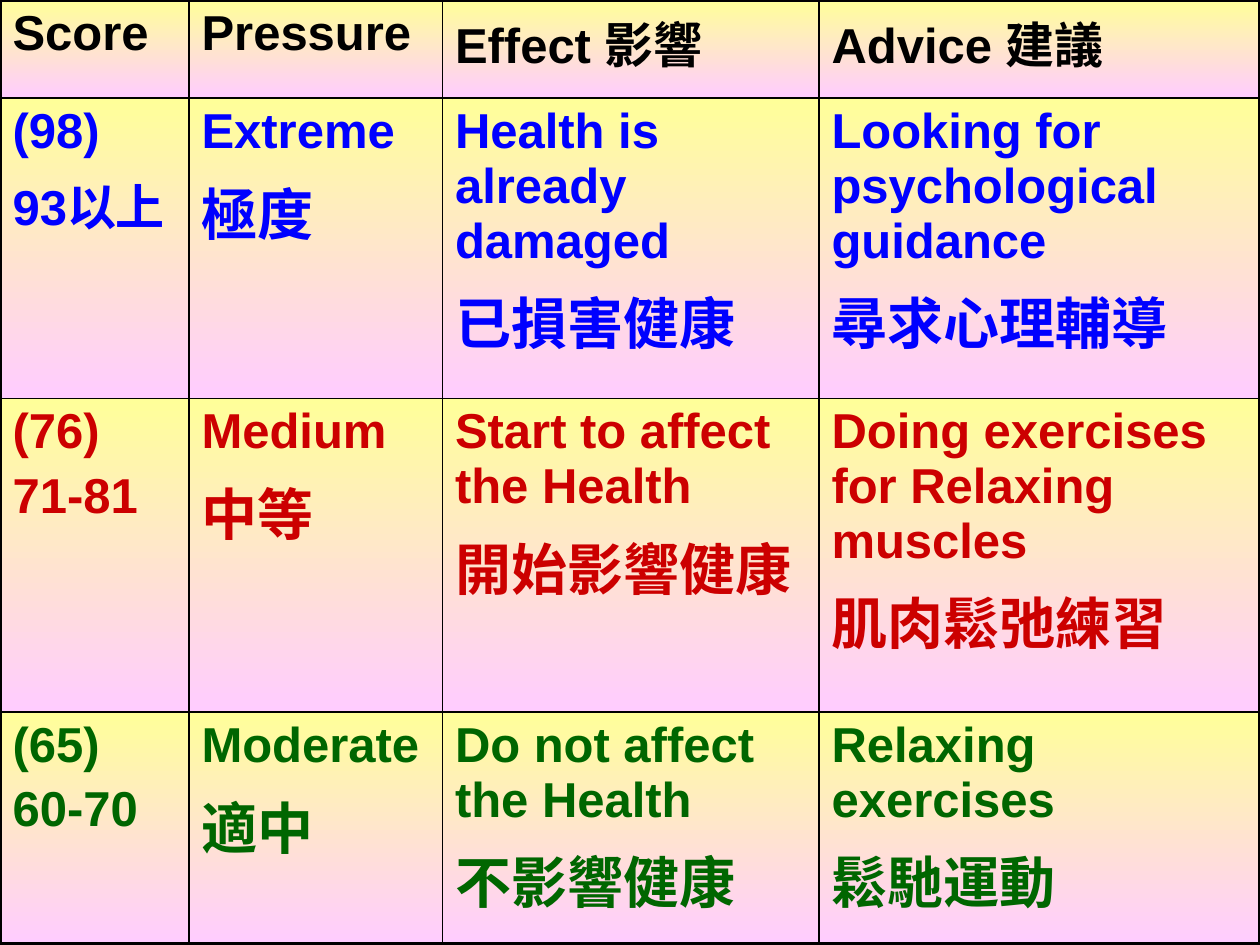
from pptx import Presentation
from pptx.dml.color import RGBColor as Rgb
from pptx.oxml import parse_xml
from pptx.oxml.ns import nsdecls
from pptx.util import Cm, Pt

HEADINGS = ["Score", "Pressure", "Effect 影響", "Advice 建議"]
LEVELS = [
    ("0000FF", [("(98)", "93以上"), ("Extreme", "極度"),
                ("Health is already damaged", "已損害健康"),
                ("Looking for psychological guidance", "尋求心理輔導")]),
    ("CC0000", [("(76)", "71-81"), ("Medium", "中等"),
                ("Start to affect the Health", "開始影響健康"),
                ("Doing exercises for Relaxing muscles", "肌肉鬆弛練習")]),
    ("006600", [("(65)", "60-70"), ("Moderate", "適中"),
                ("Do not affect the Health", "不影響健康"),
                ("Relaxing exercises", "鬆馳運動")]),
]
COLUMN_WIDTHS = [3.81, 5.11, 7.59, 8.89]
ROW_HEIGHTS = [1.98, 6.05, 6.32, 4.67]


def colour(hex_code):
    return Rgb.from_string(hex_code)


class StressSlide:
    """Hold the style and the slide, and draw the parts of the score table."""

    font = "Arial"
    english_size, chinese_size = 28, 32
    ink = "000000"
    gradient = ("FFFF99", "FFCCFF")
    outer, inner = 2.25, 1

    def __init__(self, deck):
        self.slide = deck.slides.add_slide(deck.slide_layouts[6])

    def table(self, widths, heights):
        grid = self.slide.shapes.add_table(
            len(heights), len(widths), Cm(0), Cm(0),
            Cm(sum(widths)), Cm(sum(heights))).table
        grid.first_row = grid.horz_banding = False
        for column, width in zip(grid.columns, widths):
            column.width = Cm(width)
        for row, height in zip(grid.rows, heights):
            row.height = Cm(height)
        return grid

    def fill(self, cell):
        cell.fill.gradient()
        cell.fill.gradient_angle = 270
        for stop, hex_code in zip(cell.fill.gradient_stops, self.gradient):
            stop.color.rgb = colour(hex_code)

    def borders(self, cell, outer_sides):
        properties = cell._tc.get_or_add_tcPr()
        for place, side in enumerate("LRTB"):
            weight = Pt(self.outer if side in outer_sides else self.inner)
            properties.insert(place, parse_xml(
                f'<a:ln{side} {nsdecls("a")} w="{weight}"><a:solidFill>'
                f'<a:srgbClr val="{self.ink}"/></a:solidFill></a:ln{side}>'))

    def text(self, cell, lines, sizes, hex_code):
        cell.text_frame.text = "\n".join(lines)
        for paragraph, size in zip(cell.text_frame.paragraphs, sizes):
            paragraph.space_before = Pt(0.2 * size)
            for run in paragraph.runs:
                run.font.name = self.font
                run.font.size = Pt(size)
                run.font.bold = True
                run.font.color.rgb = colour(hex_code)

    def score_table(self, headings, levels):
        grid = self.table(COLUMN_WIDTHS, ROW_HEIGHTS)
        rows = [(self.ink, [(heading,) for heading in headings])] + levels
        last_row, last_column = len(rows) - 1, len(headings) - 1
        for r, (hex_code, entries) in enumerate(rows):
            for c, lines in enumerate(entries):
                cell = grid.cell(r, c)
                edges = {"L": c == 0, "R": c == last_column,
                         "T": r == 0, "B": r == last_row}
                second_size = self.chinese_size if c else self.english_size
                self.fill(cell)
                self.borders(cell, [side for side in edges if edges[side]])
                self.text(cell, lines, (self.english_size, second_size), hex_code)


def main():
    deck = Presentation()
    deck.slide_width, deck.slide_height = Cm(25.4), Cm(19.05)
    StressSlide(deck).score_table(HEADINGS, LEVELS)
    deck.save("out.pptx")


if __name__ == "__main__":
    main()
